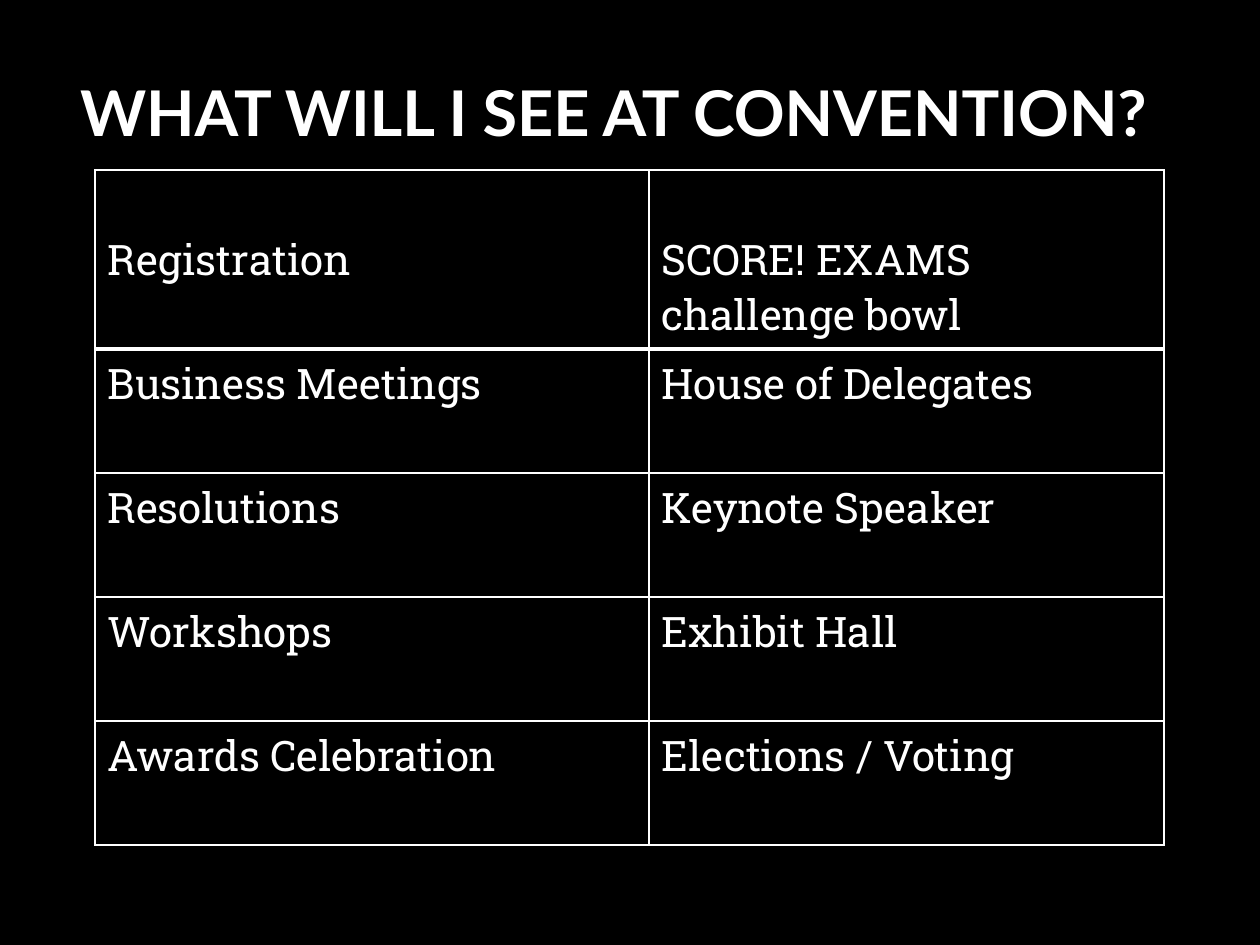
from lxml import etree
from pptx import Presentation, util as u
from pptx.dml.color import RGBColor
from pptx.enum import text
from pptx.oxml.ns import qn

PX_PER_INCH = 126
COLORS = {"background": "000000", "ink": "FFFFFF"}
ROWS = [
    ("Registration", "SCORE! EXAMS challenge bowl"),
    ("Business Meetings", "House of Delegates"),
    ("Resolutions", "Keynote Speaker"),
    ("Workshops", "Exhibit Hall"),
    ("Awards Celebration", "Elections / Voting"),
]


def px(length):
    return u.Emu(round(length * u.Inches(1) / PX_PER_INCH))


def color(name):
    return RGBColor.from_string(COLORS[name])


class ConventionDeck:
    def __init__(self):
        self.deck = Presentation()
        self.deck.slide_width, self.deck.slide_height = px(1260), px(945)
        self.page = self.deck.slides.add_slide(self.deck.slide_layouts[6])
        fill = self.page.background.fill
        fill.solid()
        fill.fore_color.rgb = color("background")

    def style(self, para, font, size, bold=False):
        para.font.name = font
        para.font.size = u.Pt(size)
        para.font.bold = bold
        para.font.color.rgb = color("ink")

    def title(self, words, left, top, width, height):
        box = self.page.shapes.add_textbox(px(left), px(top), px(width), px(height))
        frame = box.text_frame
        frame.word_wrap = True
        frame.vertical_anchor = text.MSO_ANCHOR.MIDDLE
        para = frame.paragraphs[0]
        para.text = words
        para.alignment = text.PP_ALIGN.CENTER
        para.line_spacing = 0.9
        self.style(para, "Lato", 36, bold=True)

    def borders(self, cell, **widths):
        """Draw the cell's sides, given as L, R, T and B in points."""
        properties = cell._tc.get_or_add_tcPr()
        for index, (side, width) in enumerate(widths.items()):
            line = etree.Element(qn(f"a:ln{side}"), w=str(u.Pt(width)))
            fill = etree.SubElement(line, qn("a:solidFill"))
            etree.SubElement(fill, qn("a:srgbClr"), val=COLORS["ink"])
            properties.insert(index, line)

    def table(self, rows, left, top, widths, heights, header_inset):
        frame = self.page.shapes.add_table(
            len(rows), len(widths), px(left), px(top), px(sum(widths)), px(sum(heights)))
        grid = frame.table
        for column, width in zip(grid.columns, widths):
            column.width = px(width)
        for index, (row, height, labels) in enumerate(zip(grid.rows, heights, rows)):
            row.height = px(height)
            for cell, label in zip(row.cells, labels):
                cell.text = label
                self.style(cell.text_frame.paragraphs[0], "Roboto Slab", 24)
                cell.fill.background()
                if index == 0:
                    cell.margin_top = px(header_inset)
                self.borders(cell, L=1, R=1, T=3 if index == 1 else 1,
                             B=3 if index == 0 else 1)


def main():
    convention = ConventionDeck()
    convention.title("WHAT WILL I SEE AT CONVENTION?", 63, 63, 1101, 107)
    convention.table(ROWS, 95, 170, widths=[554, 515],
                     heights=[179] + [124] * 4, header_inset=61)
    convention.deck.save("out.pptx")


if __name__ == "__main__":
    main()
